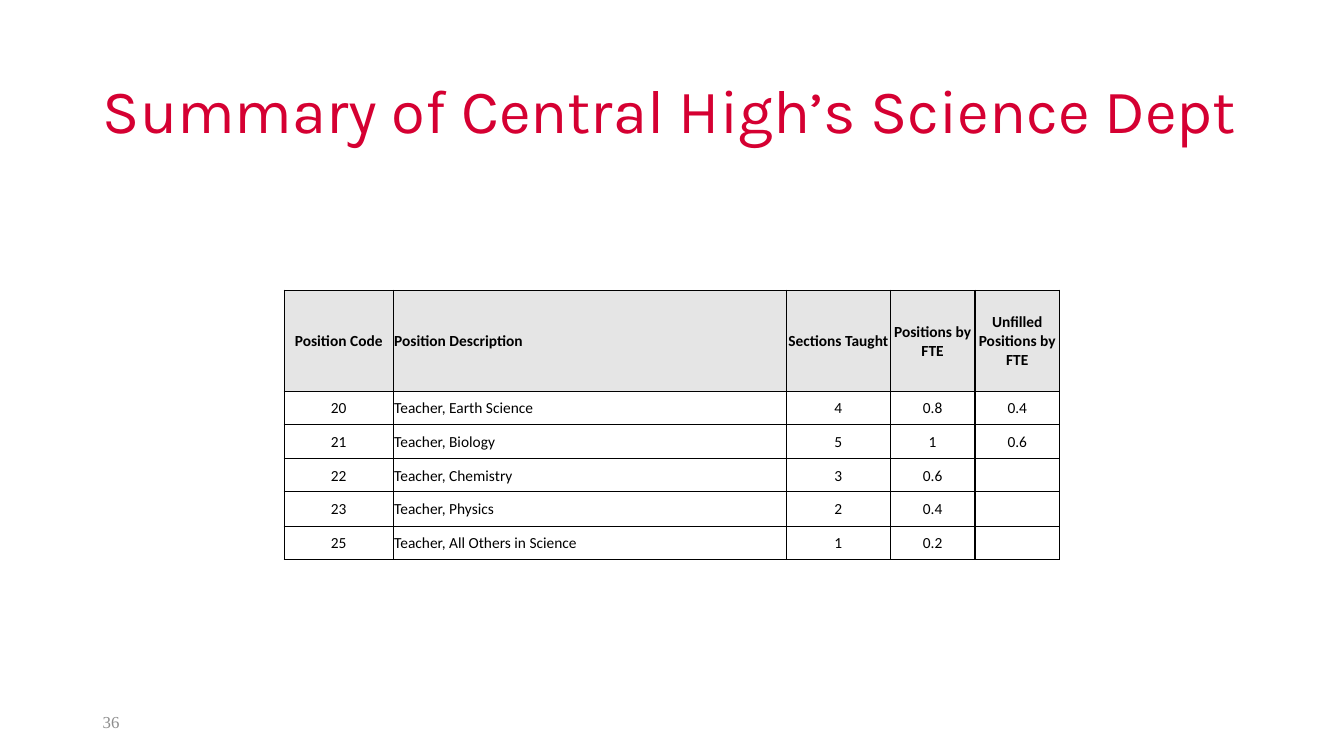
"""Build the slide that summarises the science department's positions."""
from dataclasses import dataclass

from lxml import etree
from pptx import Presentation, util as u
from pptx.dml.color import RGBColor
from pptx.enum import text
from pptx.oxml.ns import qn

PX = 9144
COLORS = {"title": "D50032", "number": "8C8C8C", "ink": "000000",
          "header": "E5E5E5", "border": "000000"}
ROW_HEIGHTS = [100, 33, 34, 33, 34, 33]


@dataclass
class Column:
    heading: str
    width: int
    values: list[str]
    align: text.PP_ALIGN = text.PP_ALIGN.CENTER


COLUMNS = [
    Column("Position Code", 108, ["20", "21", "22", "23", "25"]),
    Column("Position Description", 390,
           ["Teacher, Earth Science", "Teacher, Biology", "Teacher, Chemistry",
            "Teacher, Physics", "Teacher, All Others in Science"],
           text.PP_ALIGN.LEFT),
    Column("Sections Taught", 103, ["4", "5", "3", "2", "1"]),
    Column("Positions by FTE", 84, ["0.8", "1", "0.6", "0.4", "0.2"]),
    Column("Unfilled Positions by FTE", 84, ["0.4", "0.6", "", "", ""]),
]


def px(n: int) -> u.Emu:
    return u.Emu(n * PX)


def write(tf, words: str, *, size: int, font: str, color: str, bold: bool = False,
          align=text.PP_ALIGN.LEFT, spacing: float = 1.0) -> None:
    tf.word_wrap = True
    p = tf.paragraphs[0]
    p.alignment = align
    p.line_spacing = spacing
    if not words:
        p._p.get_or_add_endParaRPr().set("sz", str(size * 100))
        return
    r = p.add_run()
    r.text = words
    r.font.size = u.Pt(size)
    r.font.name = font
    r.font.bold = bold
    r.font.color.rgb = RGBColor.from_string(COLORS[color])


def add_borders(cell) -> None:
    tc_pr = cell._tc.get_or_add_tcPr()
    for i, side in enumerate(("lnL", "lnR", "lnT", "lnB")):
        ln = etree.Element(qn(f"a:{side}"), w=str(u.Pt(1)))
        fill = etree.SubElement(ln, qn("a:solidFill"))
        etree.SubElement(fill, qn("a:srgbClr"), val=COLORS["border"])
        tc_pr.insert(i, ln)


def fill_cell(cell, words: str, align, header: bool) -> None:
    cell.margin_left = cell.margin_right = cell.margin_top = px(1)
    cell.margin_bottom = 0
    cell.vertical_anchor = text.MSO_ANCHOR.MIDDLE
    if header:
        cell.fill.solid()
        cell.fill.fore_color.rgb = RGBColor.from_string(COLORS["header"])
    else:
        cell.fill.background()
    add_borders(cell)
    write(cell.text_frame, words, size=11, font="Calibri", color="ink",
          bold=header, align=align)


def add_positions_table(s, left: int, top: int) -> None:
    width = sum(c.width for c in COLUMNS)
    table = s.shapes.add_table(len(ROW_HEIGHTS), len(COLUMNS), px(left), px(top),
                               px(width), px(sum(ROW_HEIGHTS))).table
    table.horz_banding = False
    for row, height in zip(table.rows, ROW_HEIGHTS):
        row.height = px(height)
    for j, column in enumerate(COLUMNS):
        table.columns[j].width = px(column.width)
        for i, words in enumerate([column.heading, *column.values]):
            fill_cell(table.cell(i, j), words, column.align, header=i == 0)


def main() -> None:
    prs = Presentation()
    prs.slide_width, prs.slide_height = px(1333), px(750)
    s = prs.slides.add_slide(prs.slide_layouts[5])

    title = s.shapes.title
    title.left, title.top, title.width, title.height = map(px, (92, 40, 1150, 145))
    title.text_frame.vertical_anchor = text.MSO_ANCHOR.MIDDLE
    title.text_frame.auto_size = text.MSO_AUTO_SIZE.NONE
    write(title.text_frame, "Summary of Central High’s Science Dept",
          size=44, font="Karla", color="title", spacing=0.9)

    number = s.shapes.add_textbox(*map(px, (92, 696, 300, 40)))
    number.text_frame.vertical_anchor = text.MSO_ANCHOR.MIDDLE
    write(number.text_frame, "36", size=12, font="Times New Roman", color="number")

    add_positions_table(s, 282, 288)
    prs.save("out.pptx")


if __name__ == "__main__":
    main()
